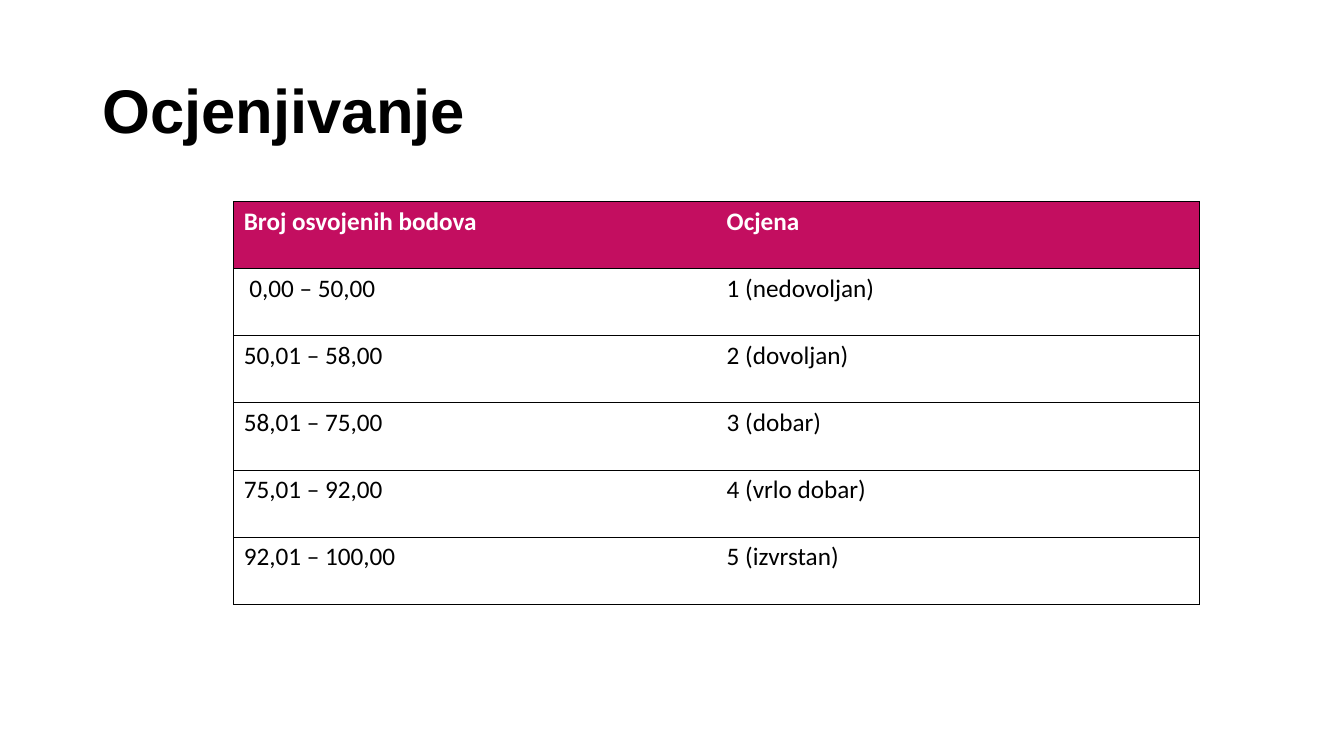
from lxml.etree import SubElement
from pptx import Presentation
from pptx.dml.color import RGBColor as RGB
from pptx.enum.text import MSO_ANCHOR as Anchor, PP_ALIGN as Align
from pptx.oxml.ns import qn
from pptx.util import Cm, Pt

TITLE = "Ocjenjivanje"
GRADES = [
    ("Broj osvojenih bodova", "Ocjena"),
    (" 0,00 – 50,00", "1 (nedovoljan)"),
    ("50,01 – 58,00", "2 (dovoljan)"),
    ("58,01 – 75,00", "3 (dobar)"),
    ("75,01 – 92,00", "4 (vrlo dobar)"),
    ("92,01 – 100,00", "5 (izvrstan)"),
]
COLORS = {"header": "C30E60", "header_text": "FFFFFF", "text": "000000", "border": "000000"}
COLUMN_WIDTH, ROW_HEIGHT = Cm(12.17), Cm(1.69)


def style_font(font, name, size, color, bold):
    font.name, font.size, font.bold = name, Pt(size), bold
    font.color.rgb = RGB.from_string(color)


def set_borders(cell, visible_sides):
    properties = cell._tc.get_or_add_tcPr()
    for side in "LRTB":
        line = SubElement(properties, qn(f"a:ln{side}"), w=str(Pt(0.5)))
        if side in visible_sides:
            fill = SubElement(line, qn("a:solidFill"))
            SubElement(fill, qn("a:srgbClr"), val=COLORS["border"])
        else:
            SubElement(line, qn("a:noFill"))


deck = Presentation()
deck.slide_width, deck.slide_height = Cm(33.87), Cm(19.05)
slide = deck.slides.add_slide(deck.slide_layouts[5])

title = slide.shapes.title
title.left, title.top, title.width, title.height = Cm(2.33), Cm(1.01), Cm(29.21), Cm(3.68)
title.text_frame.text = TITLE
title.text_frame.vertical_anchor = Anchor.MIDDLE
heading = title.text_frame.paragraphs[0]
heading.alignment, heading.line_spacing = Align.LEFT, 0.9
style_font(heading.font, "Arial", 44, COLORS["text"], True)

grade_table = slide.shapes.add_table(
    len(GRADES), 2, Cm(5.89), Cm(5.08), COLUMN_WIDTH * 2, ROW_HEIGHT * len(GRADES)
).table
grade_table.horz_banding = False
for column in grade_table.columns:
    column.width = COLUMN_WIDTH
for row in grade_table.rows:
    row.height = ROW_HEIGHT

for row_index, grade in enumerate(GRADES):
    is_header = row_index == 0
    for column_index, wording in enumerate(grade):
        cell = grade_table.cell(row_index, column_index)
        cell.text = wording
        color = COLORS["header_text" if is_header else "text"]
        style_font(cell.text_frame.paragraphs[0].font, "Calibri", 18, color, is_header)
        set_borders(cell, "TB" + "LR"[column_index])
        if is_header:
            cell.fill.solid()
            cell.fill.fore_color.rgb = RGB.from_string(COLORS["header"])
        else:
            cell.fill.background()

deck.save("out.pptx")
